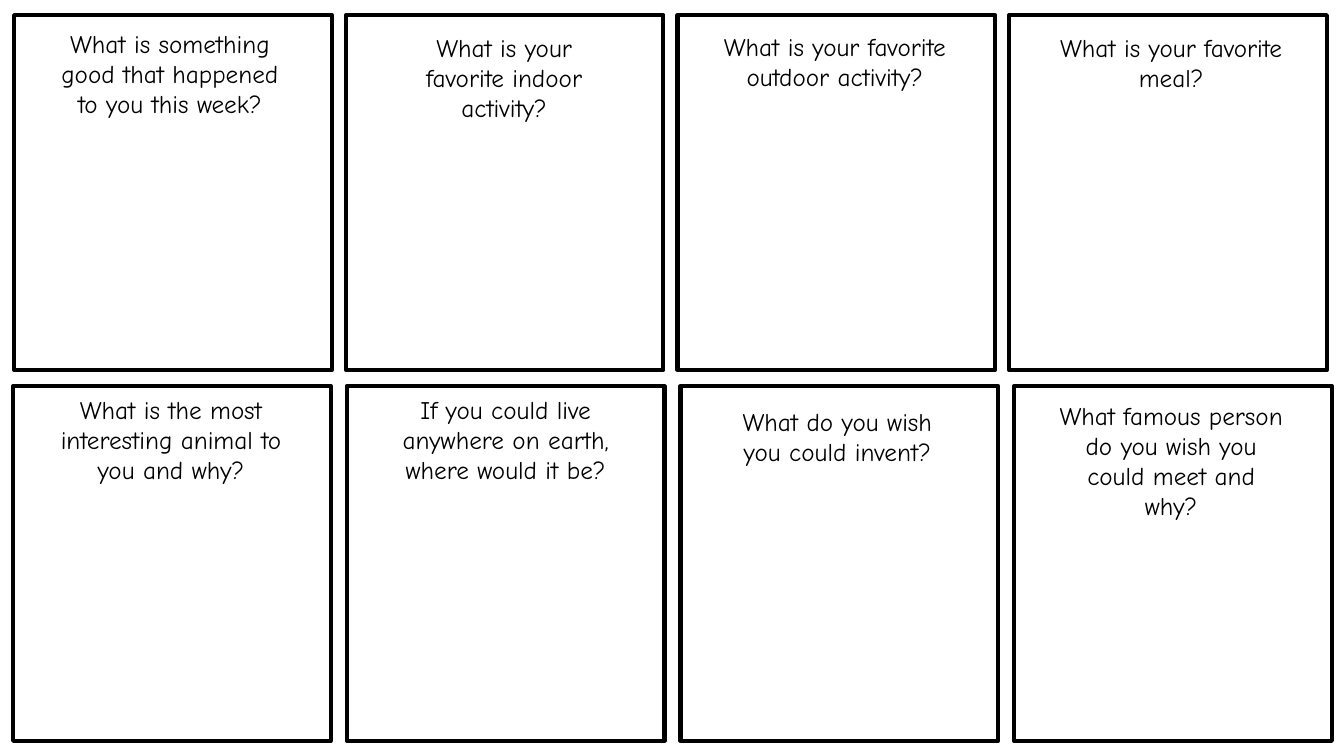
from pptx import Presentation
from pptx.dml.color import RGBColor
from pptx.enum.shapes import MSO_SHAPE
from pptx.enum.text import MSO_AUTO_SIZE, PP_ALIGN
from pptx.util import Inches, Pt

RECTANGLE = MSO_SHAPE.RECTANGLE
CENTER = PP_ALIGN.CENTER
GROW_TO_FIT = MSO_AUTO_SIZE.SHAPE_TO_FIT_TEXT

BLACK = RGBColor(0x00, 0x00, 0x00)
WHITE = RGBColor(0xFF, 0xFF, 0xFF)

SLIDE_WIDTH, SLIDE_HEIGHT = 13.33, 7.5
CARD_WIDTH, CARD_HEIGHT = 3.15, 3.52
LINE_HEIGHT, TEXT_PADDING = 0.3, 0.1
QUESTION_FONT = {"name": "Comic Neue", "size": Pt(18)}

# Each row: left of the first card, column pitch, top, and its questions
# as (text, inset from card left, inset from card top, width, lines).
CARD_ROWS = [
    (0.14, 3.29, 0.15, [
        ("What is something good that happened to you this week?", 0.32, 0.08, 2.45, 4),
        ("What is your favorite indoor activity?", 0.45, 0.12, 2.24, 3),
        ("What is your favorite outdoor activity?", 0.31, 0.11, 2.5, 3),
        ("What is your favorite meal?", 0.31, 0.12, 2.59, 2),
    ]),
    (0.13, 3.31, 3.83, [
        ("What is the most interesting animal to you and why?", 0.29, 0.03, 2.55, 3),
        ("If you could live anywhere on earth, where would it be?", 0.27, 0.03, 2.61, 3),
        ("What do you wish you could invent?", 0.37, 0.15, 2.37, 2),
        ("What famous person do you wish you could meet and why?", 0.33, 0.09, 2.45, 4),
    ]),
]


def add_card(slide, left, top):
    card = slide.shapes.add_shape(
        RECTANGLE, Inches(left), Inches(top), Inches(CARD_WIDTH), Inches(CARD_HEIGHT))
    card.shadow.inherit = False
    card.fill.solid()
    card.fill.fore_color.rgb = WHITE
    card.line.color.rgb = BLACK
    card.line.width = Pt(3)


def add_question(slide, question, left, top, width, lines):
    height = lines * LINE_HEIGHT + TEXT_PADDING
    frame = slide.shapes.add_textbox(
        Inches(left), Inches(top), Inches(width), Inches(height)).text_frame
    frame.word_wrap = True
    frame.auto_size = GROW_TO_FIT
    paragraph = frame.paragraphs[0]
    paragraph.alignment = CENTER
    run = paragraph.add_run()
    run.text = question
    for attribute, value in QUESTION_FONT.items():
        setattr(run.font, attribute, value)
    run.font.color.rgb = BLACK


def main():
    deck = Presentation()
    deck.slide_width = Inches(SLIDE_WIDTH)
    deck.slide_height = Inches(SLIDE_HEIGHT)
    slide = deck.slides.add_slide(deck.slide_layouts.get_by_name("Blank"))
    for first_left, pitch, top, questions in CARD_ROWS:
        for column, (question, inset_x, inset_y, width, lines) in enumerate(questions):
            left = first_left + column * pitch
            add_card(slide, left, top)
            add_question(slide, question, left + inset_x, top + inset_y, width, lines)
    deck.save("out.pptx")


if __name__ == "__main__":
    main()
